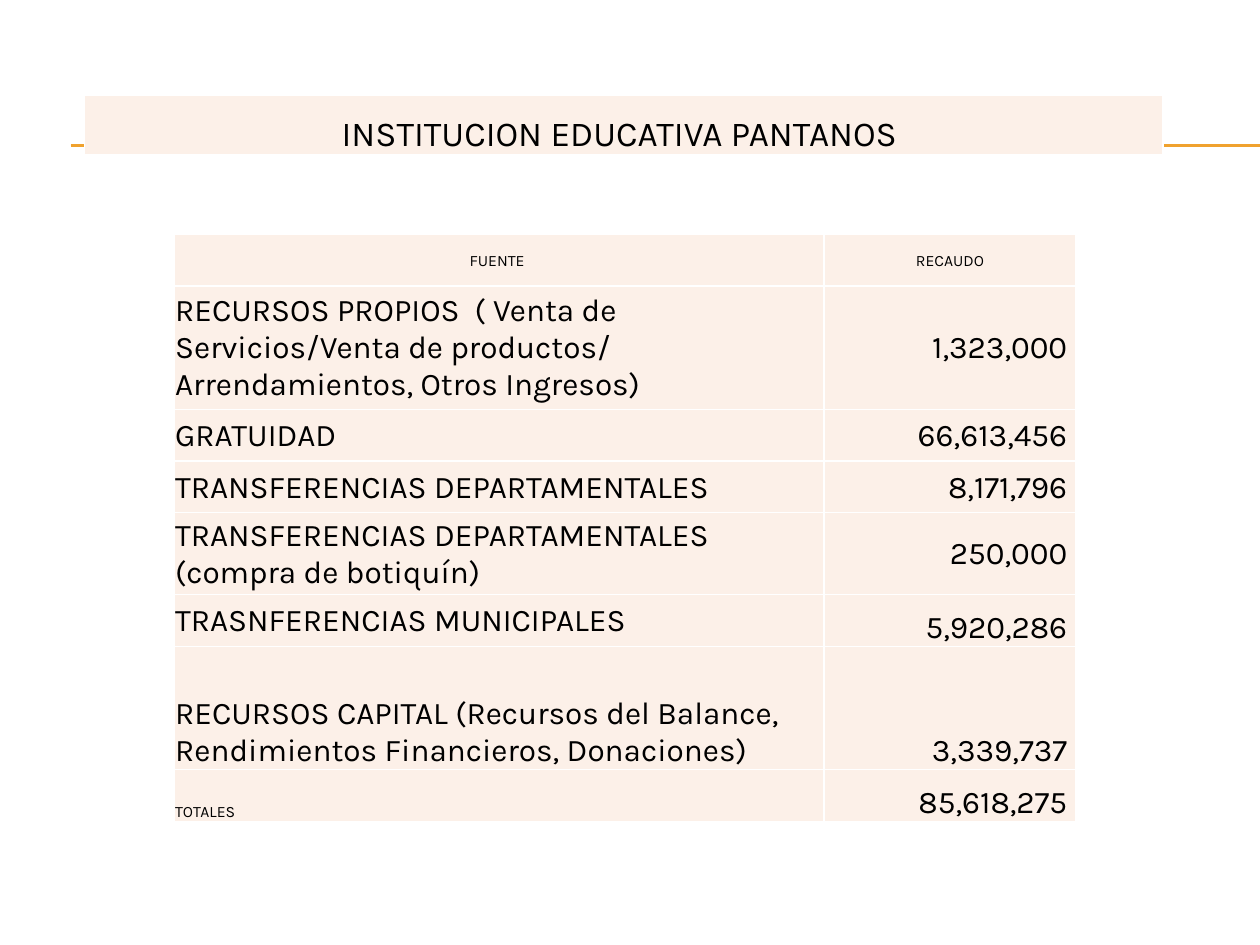
from dataclasses import dataclass

from pptx import Presentation
from pptx.dml.color import RGBColor
from pptx.enum.shapes import MSO_CONNECTOR as Connector
from pptx.enum.text import MSO_ANCHOR as Anchor, PP_ALIGN as Align
from pptx.oxml import parse_xml
from pptx.oxml.ns import nsdecls
from pptx.util import Inches, Pt


@dataclass(frozen=True)
class Theme:
    """Colours, font and type sizes of the slide."""
    font: str = "Karla"
    ink: str = "000000"
    cell: str = "FCF0E8"
    border: str = "FFFFFF"
    rule: str = "F0A22E"
    title: int = 20
    body: int = 18
    small: int = 9


THEME = Theme()
LEFT, CENTER, RIGHT = Align.LEFT, Align.CENTER, Align.RIGHT
MIDDLE, BOTTOM = Anchor.MIDDLE, Anchor.BOTTOM

TITLE_ROWS = [
    (0.47, [("INSTITUCION EDUCATIVA PANTANOS ", THEME.title, CENTER, BOTTOM)]),
]
INCOME_ROWS = [
    (0.41, [("FUENTE ", THEME.small, CENTER, MIDDLE),
            ("RECAUDO", THEME.small, CENTER, MIDDLE)]),
    (0.98, [("RECURSOS PROPIOS  ( Venta de Servicios/Venta de productos/ "
             "Arrendamientos, Otros Ingresos)", THEME.body, LEFT, MIDDLE),
            ("1,323,000 ", THEME.body, RIGHT, MIDDLE)]),
    (0.41, [("GRATUIDAD", THEME.body, LEFT, MIDDLE),
            ("66,613,456 ", THEME.body, RIGHT, MIDDLE)]),
    (0.41, [("TRANSFERENCIAS DEPARTAMENTALES", THEME.body, LEFT, MIDDLE),
            ("8,171,796 ", THEME.body, RIGHT, MIDDLE)]),
    (0.65, [("TRANSFERENCIAS DEPARTAMENTALES (compra de botiquín)",
             THEME.body, LEFT, MIDDLE),
            ("250,000 ", THEME.body, RIGHT, MIDDLE)]),
    (0.41, [("TRASNFERENCIAS MUNICIPALES", THEME.body, LEFT, MIDDLE),
            ("5,920,286 ", THEME.body, RIGHT, BOTTOM)]),
    (0.98, [("RECURSOS CAPITAL (Recursos del Balance, Rendimientos "
             "Financieros, Donaciones)", THEME.body, LEFT, BOTTOM),
            ("3,339,737 ", THEME.body, RIGHT, BOTTOM)]),
    (0.41, [("TOTALES", THEME.small, LEFT, BOTTOM),
            ("85,618,275 ", THEME.body, RIGHT, BOTTOM)]),
]


def set_values(target, values):
    """Set each named attribute of the target."""
    for name, value in values.items():
        setattr(target, name, value)


def add_borders(cell):
    """Draw a thin line on the four sides of a cell."""
    properties = cell._tc.get_or_add_tcPr()
    for index, side in enumerate("LRTB"):
        properties.insert(index, parse_xml(
            f'<a:ln{side} {nsdecls("a")} w="{Pt(1)}"><a:solidFill>'
            f'<a:srgbClr val="{THEME.border}"/></a:solidFill></a:ln{side}>'))


def fill_cell(cell, text, size, align, anchor):
    """Write and format one table cell."""
    set_values(cell, {
        "vertical_anchor": anchor, "margin_left": Inches(0.01),
        "margin_right": Inches(0.01), "margin_top": Inches(0.01),
        "margin_bottom": 0})
    cell.fill.solid()
    cell.fill.fore_color.rgb = RGBColor.from_string(THEME.cell)
    add_borders(cell)
    para = cell.text_frame.paragraphs[0]
    para.alignment = align
    span = para.add_run()
    span.text = text
    set_values(span.font, {"name": THEME.font, "size": Pt(size), "bold": False})
    span.font.color.rgb = RGBColor.from_string(THEME.ink)


def add_grid(page, left, top, widths, rows):
    """Place a table with the given column widths and rows."""
    height = sum(row_height for row_height, _ in rows)
    table = page.shapes.add_table(
        len(rows), len(widths), Inches(left), Inches(top),
        Inches(sum(widths)), Inches(height)).table
    set_values(table, {"first_row": False, "horz_banding": False})
    for column, width in zip(table.columns, widths):
        column.width = Inches(width)
    for row, (row_height, entries) in zip(table.rows, rows):
        row.height = Inches(row_height)
        for cell, entry in zip(row.cells, entries):
            fill_cell(cell, *entry)


def add_rule(page, left, top, width):
    """Place one horizontal line behind the title."""
    rule = page.shapes.add_connector(
        Connector.STRAIGHT, Inches(left), Inches(top),
        Inches(left + width), Inches(top))
    rule.line.color.rgb = RGBColor.from_string(THEME.rule)
    rule.line.width = Pt(0.75)
    rule._element.spPr.append(parse_xml(f'<a:effectLst {nsdecls("a")}/>'))


def main():
    """Build the slide and save it."""
    deck = Presentation()
    set_values(deck, {"slide_width": Inches(10), "slide_height": Inches(7.5)})
    page = deck.slides.add_slide(deck.slide_layouts[6])
    for top in (1.15, 1.16):
        add_rule(page, 0.56, top, 9.44)
    add_grid(page, 0.67, 0.76, [8.56], TITLE_ROWS)
    add_grid(page, 1.38, 1.86, [5.16, 2], INCOME_ROWS)
    deck.save("out.pptx")


if __name__ == "__main__":
    main()
